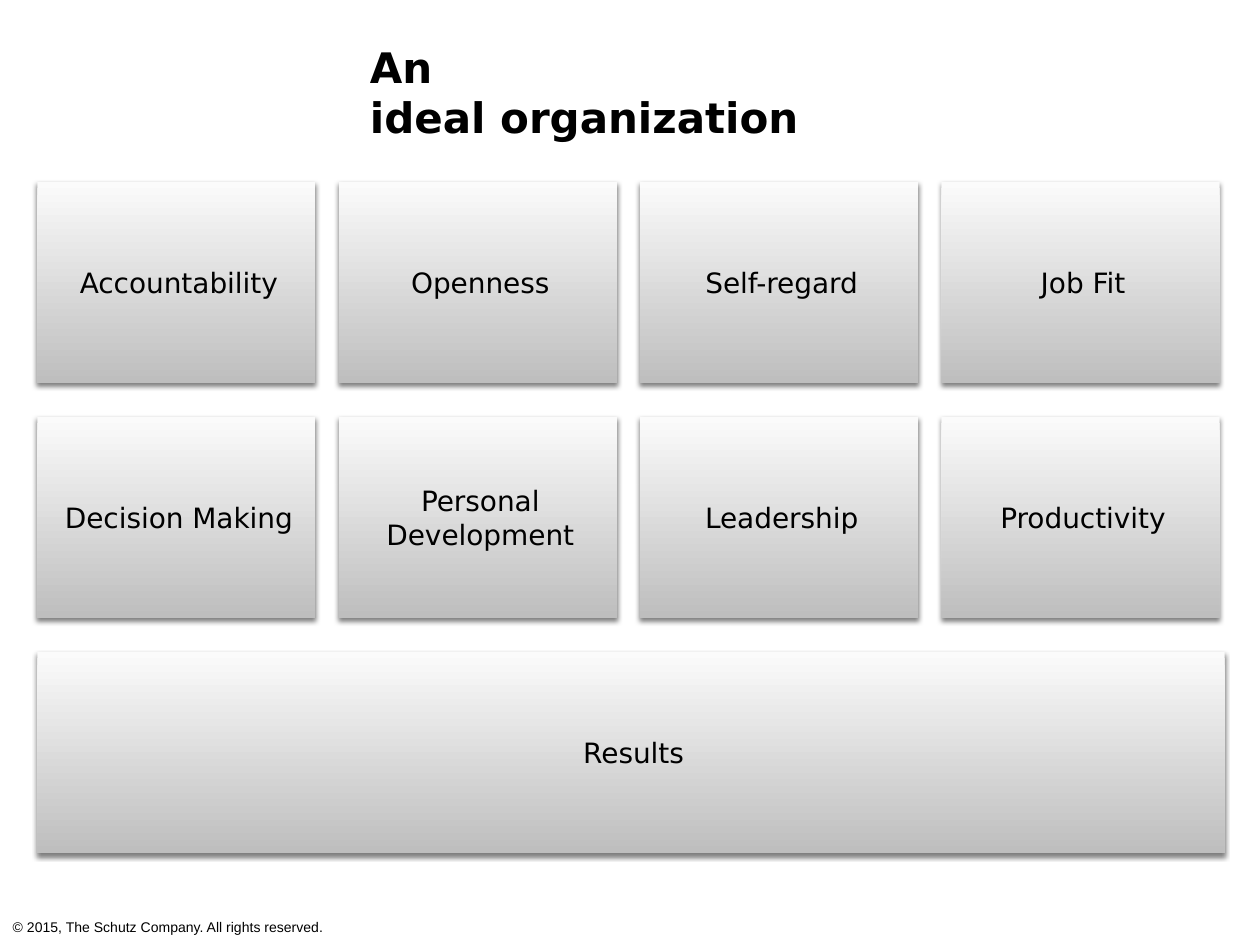
import pptx
import pptx.util
import pptx.dml.color
import pptx.enum.shapes
import pptx.enum.text
import pptx.oxml

Pt = pptx.util.Pt
ALIGN = pptx.enum.text.PP_ALIGN
ANCHOR = pptx.enum.text.MSO_ANCHOR
FIT = pptx.enum.text.MSO_AUTO_SIZE

LEFT, TOP = 21.3, 103.8
STEP_X, STEP_Y = 172.2, 134.3
WIDTH, HEIGHT = 159, 115.2
ROWS = [
    ["Accountability", "Openness", "Self-regard", "Job Fit"],
    ["Decision Making", "Personal Development", "Leadership", "Productivity"],
    ["Results"],
]

SHADOW = (
    '<a:effectLst xmlns:a="http://schemas.openxmlformats.org/drawingml/2006/main">'
    '<a:outerShdw blurRad="38100" dist="25400" dir="5400000" rotWithShape="0">'
    '<a:srgbClr val="000000"><a:alpha val="50000"/></a:srgbClr>'
    "</a:outerShdw></a:effectLst>"
)


def color(value):
    return pptx.dml.color.RGBColor.from_string(value)


class Deck:
    font = "DejaVu Sans"
    ink = "000000"
    shades = ("FBFBFB", "BEBEBE")
    indent = 3

    def __init__(self):
        self.file = pptx.Presentation()
        self.file.slide_width, self.file.slide_height = Pt(720), Pt(540)
        self.slide = self.file.slides.add_slide(self.file.slide_layouts[5])

    def label(self, shape, text, size, font, align, anchor, inset, indent=0, bold=False):
        frame = shape.text_frame
        frame.text = text
        frame.word_wrap = True
        frame.auto_size = FIT.NONE
        frame.vertical_anchor = anchor
        frame.margin_left = frame.margin_right = Pt(inset)
        frame.margin_top = frame.margin_bottom = Pt(inset)
        for para in frame.paragraphs:
            para.alignment = align
            if indent:
                para._p.get_or_add_pPr().set("marL", str(Pt(indent)))
            for run in para.runs:
                run.font.name = font
                run.font.size = Pt(size)
                run.font.bold = bold
                run.font.color.rgb = color(self.ink)

    def title(self, text, x, y, w, h):
        head = self.slide.shapes.title
        head.left, head.top, head.width, head.height = Pt(x), Pt(y), Pt(w), Pt(h)
        self.label(head, text, 24, self.font, ALIGN.LEFT, ANCHOR.MIDDLE, 4, bold=True)

    def tile(self, text, x, y, w, h):
        rect = pptx.enum.shapes.MSO_SHAPE.RECTANGLE
        box = self.slide.shapes.add_shape(rect, Pt(x), Pt(y), Pt(w), Pt(h))
        box.fill.gradient()
        box.fill.gradient_angle = 270
        for stop, shade in zip(box.fill.gradient_stops, self.shades):
            stop.color.rgb = color(shade)
        box.line.fill.background()
        box._element.spPr.append(pptx.oxml.parse_xml(SHADOW))
        self.label(box, text, 16, self.font, ALIGN.CENTER, ANCHOR.MIDDLE, 0, self.indent)

    def note(self, text, x, y, w, h):
        box = self.slide.shapes.add_textbox(Pt(x), Pt(y), Pt(w), Pt(h))
        self.label(box, text, 8, "Arial", ALIGN.LEFT, ANCHOR.TOP, 4.3, self.indent)


def main():
    deck = Deck()
    deck.title("An\videal organization", 207.4, 34, 304.6, 36.7)
    for r, row in enumerate(ROWS):
        wide = WIDTH if len(row) > 1 else 3 * STEP_X + WIDTH + 3
        for c, text in enumerate(row):
            deck.tile(text, LEFT + c * STEP_X, TOP + r * STEP_Y, wide, HEIGHT)
    deck.note("© 2015, The Schutz Company. All rights reserved.", 0, 520.6, 720, 17.3)
    deck.file.save("out.pptx")


if __name__ == "__main__":
    main()
